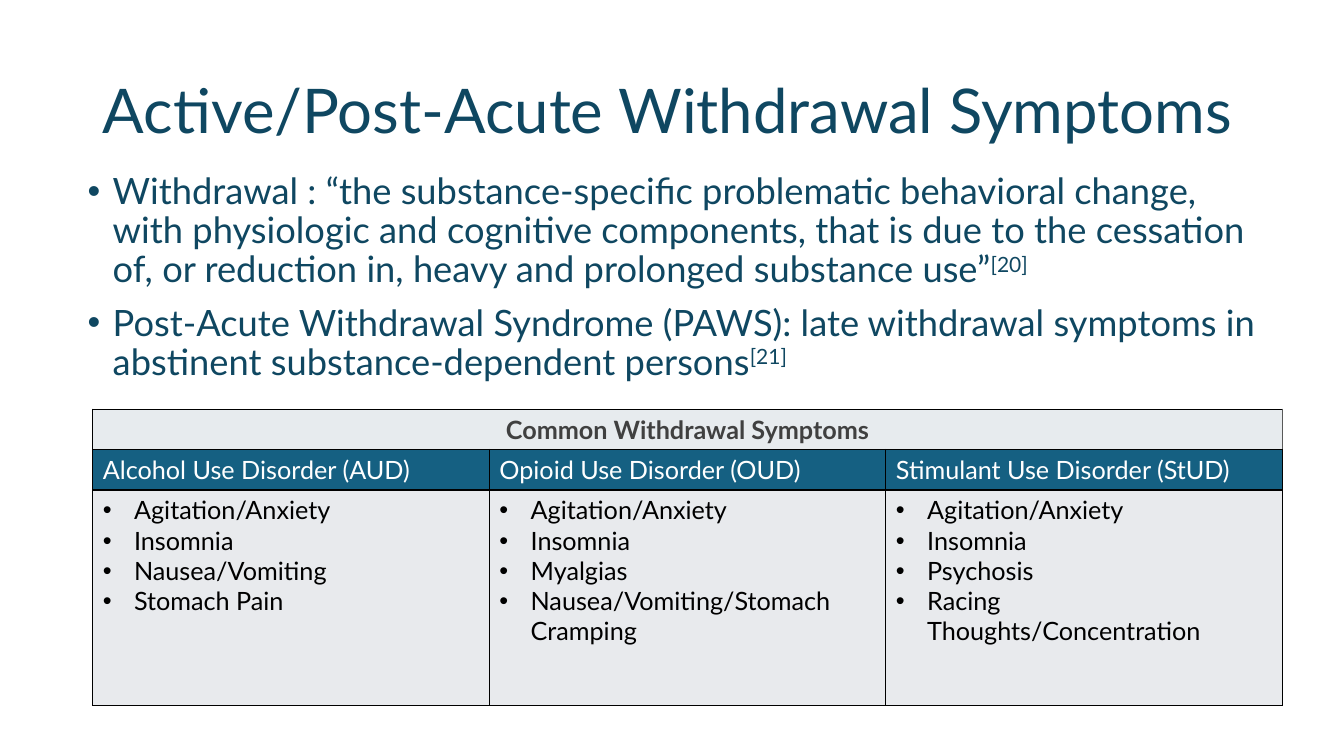
from dataclasses import dataclass

from lxml import etree
from pptx import Presentation, util as u
from pptx.dml.color import RGBColor
from pptx.enum import text
from pptx.oxml.ns import qn


@dataclass(frozen=True)
class Theme:
    font: str = "Lato"
    heading: str = "0F4761"
    caption: str = "404040"
    caption_fill: str = "E7EBEE"
    caption_edge: str = "595959"
    header: str = "FFFFFF"
    header_fill: str = "156082"
    symptom: str = "000000"
    symptom_fill: str = "E8EAED"
    border: str = "000000"
    title_size: float = 44
    body_size: float = 25.9
    table_size: float = 18


class SlideBuilder:
    def __init__(self, slide, theme):
        self.slide = slide
        self.theme = theme

    def run(self, paragraph, words, size, color, bold=False, raised=False):
        run = paragraph.add_run()
        run.text = words
        run.font.name = self.theme.font
        run.font.size = u.Pt(size)
        run.font.bold = bold
        run.font.color.rgb = RGBColor.from_string(color)
        if raised:
            run.font._element.set("baseline", "30000")

    def bullet(self, paragraph, indent):
        props = paragraph._p.get_or_add_pPr()
        props.set("marL", str(u.Inches(indent)))
        props.set("indent", str(-u.Inches(indent)))
        etree.SubElement(props, qn("a:buFont"), typeface="Arial")
        etree.SubElement(props, qn("a:buChar"), char="•")

    def paragraphs(self, frame, count):
        return [frame.paragraphs[0]] + [frame.add_paragraph() for _ in range(count - 1)]

    def place(self, shape, left, top, width, height):
        shape.left, shape.top = u.Inches(left), u.Inches(top)
        shape.width, shape.height = u.Inches(width), u.Inches(height)

    def title(self, words, *box):
        title = self.slide.shapes.title
        self.place(title, *box)
        frame = title.text_frame
        frame.auto_size = text.MSO_AUTO_SIZE.NONE
        frame.vertical_anchor = text.MSO_ANCHOR.MIDDLE
        heading = frame.paragraphs[0]
        heading.alignment = text.PP_ALIGN.LEFT
        heading.line_spacing = 0.9
        self.run(heading, words, self.theme.title_size, self.theme.heading)

    def definitions(self, entries, *box):
        frame = self.slide.shapes.add_textbox(*map(u.Inches, box)).text_frame
        frame.word_wrap = True
        for paragraph, (definition, citation) in zip(self.paragraphs(frame, len(entries)), entries):
            paragraph.line_spacing = 0.9
            paragraph.space_before = u.Pt(10)
            self.bullet(paragraph, 0.25)
            self.run(paragraph, definition, self.theme.body_size, self.theme.heading)
            self.run(paragraph, citation, self.theme.body_size, self.theme.heading, raised=True)

    def cell(self, cell, lines, color, fill, bold=False, bulleted=False, right_edge=None):
        cell.fill.solid()
        cell.fill.fore_color.rgb = RGBColor.from_string(fill)
        props = cell._tc.get_or_add_tcPr()
        for position, side in enumerate("LRTB"):
            edge = right_edge if side == "R" and right_edge else self.theme.border
            line = etree.Element(qn(f"a:ln{side}"), w=str(u.Pt(1)))
            solid = etree.SubElement(line, qn("a:solidFill"))
            etree.SubElement(solid, qn("a:srgbClr"), val=edge)
            props.insert(position, line)
        for paragraph, words in zip(self.paragraphs(cell.text_frame, len(lines)), lines):
            if bulleted:
                self.bullet(paragraph, 0.31)
            if words:
                self.run(paragraph, words, self.theme.table_size, color, bold)

    def symptom_table(self, caption, disorders, left, top, width, row_heights):
        theme = self.theme
        columns = len(disorders)
        table = self.slide.shapes.add_table(
            len(row_heights), columns, u.Inches(left), u.Inches(top),
            u.Inches(width), u.Inches(sum(row_heights))).table
        table.first_row = table.horz_banding = False
        for row, height in zip(table.rows, row_heights):
            row.height = u.Inches(height)
        for column, (disorder, symptoms) in enumerate(disorders.items()):
            table.columns[column].width = u.Inches(width / columns)
            self.cell(table.cell(0, column), [caption if column == 0 else ""], theme.caption,
                      theme.caption_fill, bold=True, right_edge=theme.caption_edge)
            self.cell(table.cell(1, column), [disorder], theme.header, theme.header_fill)
            self.cell(table.cell(2, column), symptoms, theme.symptom,
                      theme.symptom_fill, bulleted=True)
        table.cell(0, 0).merge(table.cell(0, columns - 1))
        table.cell(0, 0).text_frame.paragraphs[0].alignment = text.PP_ALIGN.CENTER


def main():
    deck = Presentation()
    deck.slide_width, deck.slide_height = u.Inches(13.33), u.Inches(7.5)
    builder = SlideBuilder(deck.slides.add_slide(deck.slide_layouts[5]), Theme())
    builder.title("Active/Post-Acute Withdrawal Symptoms", 0.92, 0.4, 11.5, 1.45)
    builder.definitions([
        ("Withdrawal : “the substance-specific problematic behavioral change, with physiologic "
         "and cognitive components, that is due to the cessation of, or reduction in, heavy "
         "and prolonged substance use”", "[20]"),
        ("Post-Acute Withdrawal Syndrome (PAWS): late withdrawal symptoms in abstinent "
         "substance-dependent persons", "[21]"),
    ], 0.77, 1.67, 11.8, 2.24)
    shared = ["Agitation/Anxiety", "Insomnia"]
    builder.symptom_table("Common Withdrawal Symptoms", {
        "Alcohol Use Disorder (AUD)": shared + ["Nausea/Vomiting", "Stomach Pain"],
        "Opioid Use Disorder (OUD)": shared + ["Myalgias", "Nausea/Vomiting/Stomach Cramping"],
        "Stimulant Use Disorder (StUD)": shared + ["Psychosis", "Racing Thoughts/Concentration"],
    }, 0.92, 4.06, 11.8, [0.4, 0.4, 2.14])
    deck.save("out.pptx")


if __name__ == "__main__":
    main()
